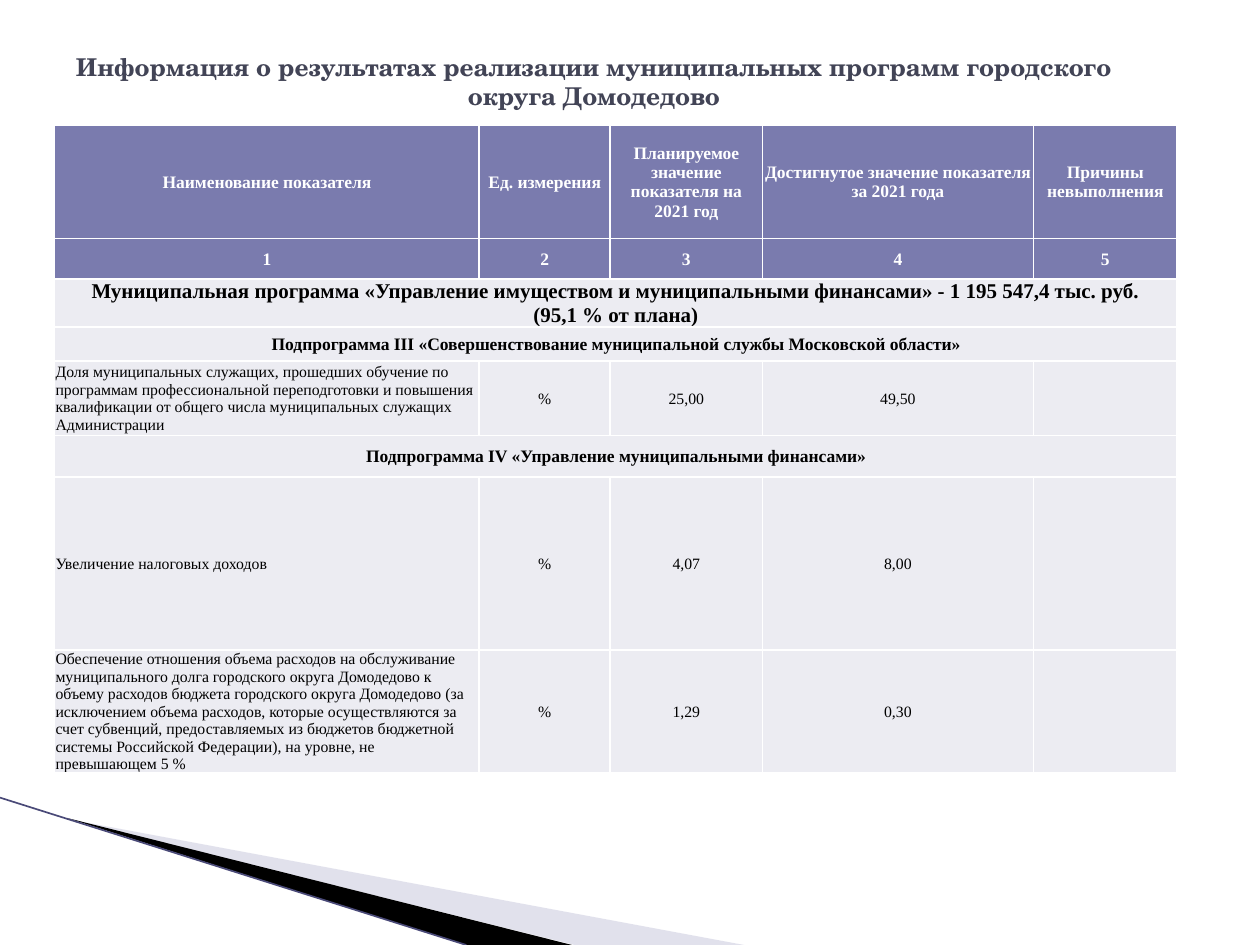
from lxml import etree
from pptx import Presentation
from pptx.dml.color import RGBColor
from pptx.enum.shapes import MSO_CONNECTOR
from pptx.enum.text import MSO_ANCHOR, MSO_AUTO_SIZE, PP_ALIGN
from pptx.oxml import parse_xml
from pptx.oxml.ns import qn
from pptx.util import Cm, Pt

CENTER, LEFT = PP_ALIGN.CENTER, PP_ALIGN.LEFT
MIDDLE = MSO_ANCHOR.MIDDLE
NO_FIT = MSO_AUTO_SIZE.NONE
STRAIGHT = MSO_CONNECTOR.STRAIGHT
NAMESPACE = "http://schemas.openxmlformats.org/drawingml/2006/main"

COLORS = {
    "title": "424456",
    "header": "7A7BAE",
    "body": "ECECF2",
    "white": "FFFFFF",
    "black": "000000",
    "wedge": "B6B6D1",
    "edge": "4A4A78",
}
TITLE = "Информация о результатах реализации муниципальных программ городского округа Домодедово"
HEADERS = [
    ["Наименование показателя", "Ед. измерения", "Планируемое значение показателя на 2021 год",
     "Достигнутое значение показателя за 2021 года", "Причины невыполнения"],
    ["1", "2", "3", "4", "5"],
]
PROGRAM = ("Муниципальная программа «Управление имуществом и муниципальными финансами» "
           "- 1 195 547,4 тыс. руб.\v(95,1 % от плана)")
ROWS = HEADERS + [
    [PROGRAM],
    ["Подпрограмма III «Совершенствование муниципальной службы Московской области»"],
    ["Доля муниципальных служащих, прошедших обучение по программам профессиональной "
     "переподготовки и повышения квалификации от общего числа муниципальных служащих "
     "Администрации", "%", "25,00", "49,50", ""],
    ["Подпрограмма IV «Управление муниципальными финансами»"],
    ["Увеличение налоговых доходов", "%", "4,07", "8,00", ""],
    ["Обеспечение отношения объема расходов на обслуживание муниципального долга городского "
     "округа Домодедово к объему расходов бюджета городского округа Домодедово (за исключением "
     "объема расходов, которые осуществляются за счет субвенций, предоставляемых из бюджетов "
     "бюджетной системы Российской Федерации), на уровне, не превышающем 5 %",
     "%", "1,29", "0,30", ""],
]
COLUMN_WIDTHS = [8.56, 2.64, 3.07, 5.46, 2.9]
ROW_HEIGHTS = [2.29, 0.81, 0.97, 0.69, 1.5, 0.84, 3.48, 2.48]


def write_text(frame, text, *, font, size, color, bold=False, align=CENTER):
    frame.text = text
    para = frame.paragraphs[0]
    para.alignment = align
    for span in para.runs:
        span.font.name = font
        span.font.size = Pt(size)
        span.font.bold = bold
        span.font.color.rgb = RGBColor.from_string(COLORS[color])


class SlideBuilder:
    """Holds the style and the current page, and adds each kind of element."""

    title_font = "TeX Gyre Schola"
    table_font = "Times New Roman"

    def __init__(self, deck):
        self.page = deck.slides.add_slide(deck.slide_layouts[5])

    def title(self, text, left, top, width, height):
        box = self.page.shapes.title
        box.left, box.top, box.width, box.height = map(Cm, (left, top, width, height))
        write_text(box.text_frame, text, font=self.title_font, size=14, color="title", bold=True)
        box.text_frame.auto_size = NO_FIT
        box.text_frame.vertical_anchor = MIDDLE

    def wedge(self, points, color, opacity=100):
        start, *others = [(Cm(x), Cm(y)) for x, y in points]
        builder = self.page.shapes.build_freeform(*start)
        builder.add_line_segments(others, close=True)
        shape = builder.convert_to_shape()
        shape.shadow.inherit = False
        shape.line.fill.background()
        shape.fill.solid()
        shape.fill.fore_color.rgb = RGBColor.from_string(COLORS[color])
        if opacity < 100:
            tone = shape.fill._xPr.find(".//" + qn("a:srgbClr"))
            etree.SubElement(tone, qn("a:alpha"), val=str(opacity * 1000))

    def line(self, start, end, color, width):
        connector = self.page.shapes.add_connector(STRAIGHT, *map(Cm, (*start, *end)))
        connector.line.color.rgb = RGBColor.from_string(COLORS[color])
        connector.line.width = Pt(width)
        etree.SubElement(connector._element.spPr, qn("a:effectLst"))

    def cell(self, cell, text, fill, **style):
        cell.margin_left = cell.margin_right = cell.margin_top = Cm(0.02)
        cell.margin_bottom = 0
        cell.vertical_anchor = MIDDLE
        properties = cell._tc.get_or_add_tcPr()
        for side in ("lnL", "lnR", "lnT", "lnB"):
            properties.append(parse_xml(
                f'<a:{side} xmlns:a="{NAMESPACE}" w="{Pt(1)}"><a:solidFill>'
                f'<a:srgbClr val="{COLORS["white"]}"/></a:solidFill></a:{side}>'))
        cell.fill.solid()
        cell.fill.fore_color.rgb = RGBColor.from_string(COLORS[fill])
        if text:
            write_text(cell.text_frame, text, font=self.table_font, **style)

    def table(self, rows, left, top, widths, heights):
        frame = self.page.shapes.add_table(
            len(rows), len(widths), *map(Cm, (left, top, sum(widths), sum(heights))))
        table = frame.table
        for column, width in zip(table.columns, widths):
            column.width = Cm(width)
        for row, height in zip(table.rows, heights):
            row.height = Cm(height)
        for row_index, texts in enumerate(rows):
            header = row_index < len(HEADERS)
            section = len(texts) == 1
            size = 12 if texts[0] == PROGRAM else 10 if header or section else 9
            for column_index in range(len(widths)):
                text = texts[column_index] if column_index < len(texts) else ""
                indicator = column_index == 0 and not (header or section)
                self.cell(table.cell(row_index, column_index), text,
                          "header" if header else "body", size=size,
                          color="white" if header else "black",
                          bold=header or section, align=LEFT if indicator else CENTER)
            if section:
                table.cell(row_index, 0).merge(table.cell(row_index, len(widths) - 1))


def main():
    deck = Presentation()
    deck.slide_width, deck.slide_height = Cm(25.4), Cm(19.05)
    builder = SlideBuilder(deck)
    builder.wedge([(1.4, 16.52), (15.0, 19.05), (11.58, 19.05)], "wedge", opacity=40)
    builder.wedge([(1.35, 16.49), (11.53, 19.05), (9.4, 19.05)], "black")
    builder.line((0, 16.08), (9.4, 19.05), "edge", 0.95)
    builder.title(TITLE, 1.09, 0.76, 21.77, 1.75)
    builder.table(ROWS, 1.1, 2.52, COLUMN_WIDTHS, ROW_HEIGHTS)
    deck.save("out.pptx")


if __name__ == "__main__":
    main()
